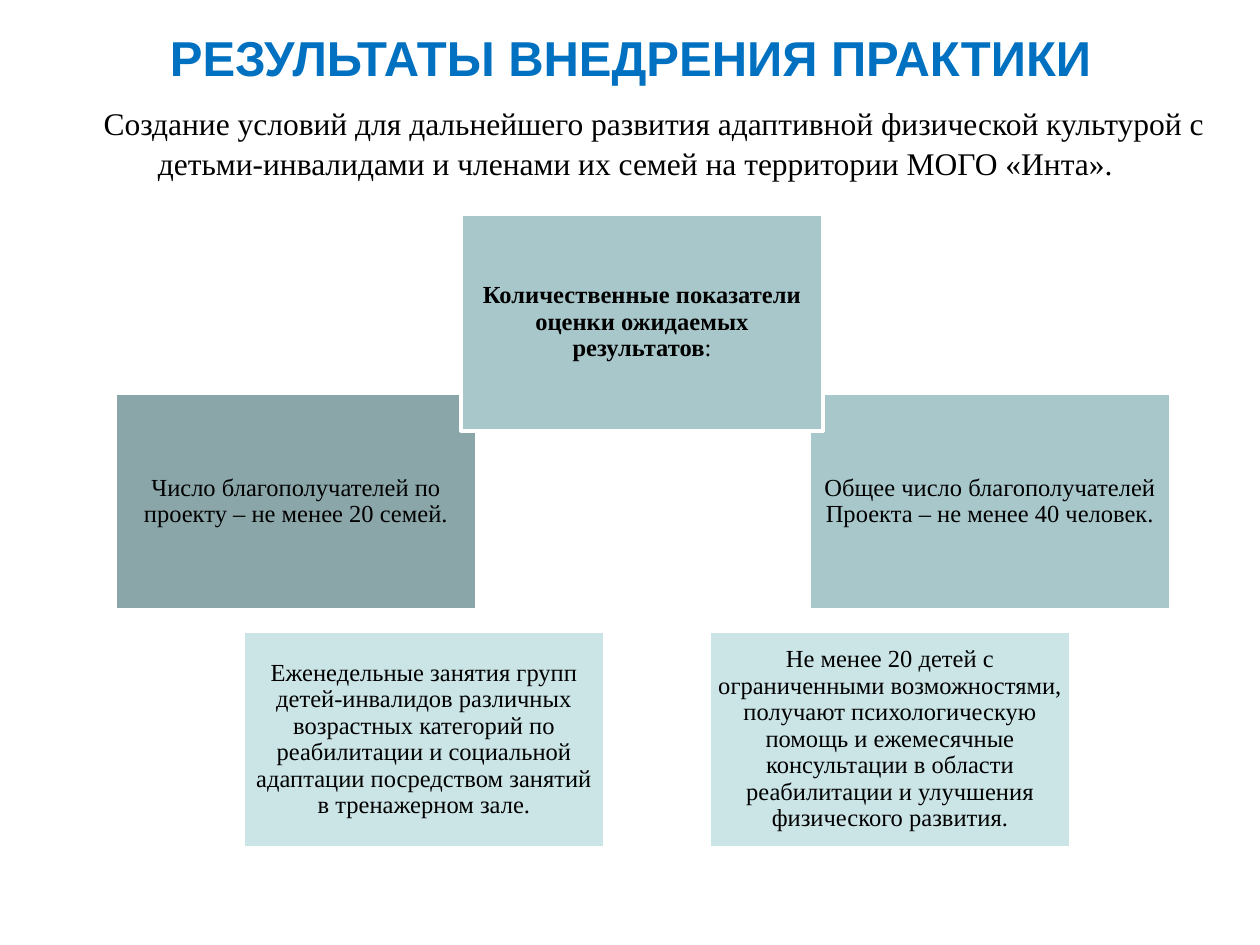
from pptx import Presentation
from pptx import util as u
from pptx.dml.color import RGBColor
from pptx.enum import shapes, text

SCALE = u.Inches(1) / 126
COLORS = {"title": "0070C0", "ink": "000000", "edge": "FFFFFF",
          "top": "A8C7CA", "left": "8AA6A8", "right": "A8C7CA", "bottom": "CBE4E6"}
CARD_SIZE = (362, 217)
CARDS = [
    ((115, 393), "left", ["Число благополучателей по проекту – не менее 20 семей."]),
    ((809, 393), "right", ["Общее число благополучателей Проекта – не менее 40 человек."]),
    ((243, 631), "bottom", ["Еженедельные занятия групп детей-инвалидов различных возрастных "
                            "категорий по реабилитации и социальной адаптации посредством "
                            "занятий в тренажерном зале."]),
    ((709, 631), "bottom", ["Не менее 20 детей с ограниченными возможностями, получают "
                            "психологическую помощь и ежемесячные консультации в области "
                            "реабилитации и улучшения физического развития."]),
    ((461, 214), "top", ["Количественные показатели оценки ожидаемых результатов", ":"]),
]


def px(length):
    """Turn px into EMU."""
    return u.Emu(round(length * SCALE))


def color(name):
    """Look up a named colour."""
    return RGBColor.from_string(COLORS[name])


def write(shape, spans, size, font="Times New Roman", ink="ink", margins=(13, 6)):
    """Fill a shape with one centred paragraph and return it."""
    frame = shape.text_frame
    frame.word_wrap = True
    frame.margin_left = frame.margin_right = px(margins[0])
    frame.margin_top = frame.margin_bottom = px(margins[1])
    para = frame.paragraphs[0]
    para.alignment = text.PP_ALIGN.CENTER
    for words in spans:
        span = para.add_run()
        span.text = words
        span.font.name = font
        span.font.size = u.Pt(size)
        span.font.color.rgb = color(ink)
    return para


def add_title(page, box):
    """Place the slide title."""
    shape = page.shapes.add_textbox(*map(px, box))
    para = write(shape, ["РЕЗУЛЬТАТЫ ВНЕДРЕНИЯ ПРАКТИКИ"], 28, "Arial", "title", (13, 11))
    para.runs[0].font.bold = True


def add_goal(page, box):
    """Place the goal statement with its first-line indent."""
    shape = page.shapes.add_textbox(*map(px, box))
    para = write(shape, ["Создание условий для дальнейшего развития адаптивной физической "
                         "культурой с детьми-инвалидами и членами их семей на территории "
                         "МОГО «Инта»."], 18)
    para.line_spacing = 1.05
    para._p.get_or_add_pPr().set("indent", str(px(37)))


def add_card(page, box, fill, spans):
    """Place one indicator card, with a bold lead when it has two spans."""
    card = page.shapes.add_shape(shapes.MSO_SHAPE.RECTANGLE, *map(px, box))
    card.shadow.inherit = False
    card.fill.solid()
    card.fill.fore_color.rgb = color(fill)
    card.line.color.rgb = color("edge")
    card.line.width = u.Pt(2)
    card.text_frame.vertical_anchor = text.MSO_ANCHOR.MIDDLE
    para = write(card, spans, 14, margins=(7, 7))
    para.line_spacing = 0.9
    para.runs[0].font.bold = len(spans) > 1


def add_indicators(page, box):
    """Place all cards relative to the diagram box."""
    left, top = box[:2]
    for (x, y), fill, spans in CARDS:
        add_card(page, (left + x - 115, top + y - 214, *CARD_SIZE), fill, spans)


def main():
    """Build and save the slide."""
    deck = Presentation()
    deck.slide_width, deck.slide_height = px(1260), px(945)
    page = deck.slides.add_slide(deck.slide_layouts[6])
    add_title(page, (64, 16, 1133, 97))
    add_goal(page, (35, 96, 1201, 679))
    add_indicators(page, (115, 214, 1056, 634))
    deck.save("out.pptx")


if __name__ == "__main__":
    main()
